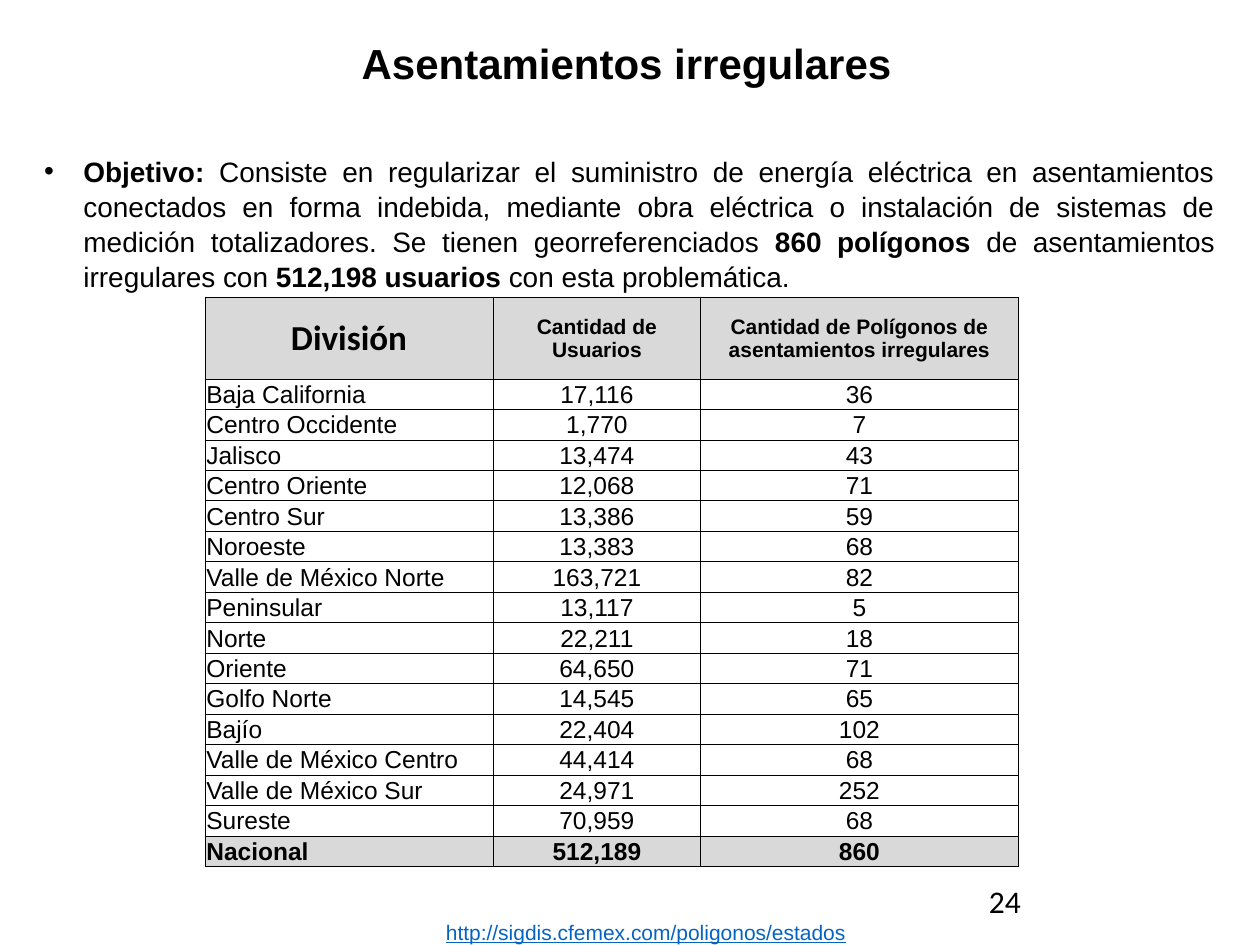
from lxml import etree
from pptx import Presentation
from pptx.dml.color import RGBColor
from pptx.enum.text import MSO_ANCHOR, MSO_AUTO_SIZE, PP_ALIGN
from pptx.oxml.ns import qn
from pptx.util import Pt

LEFT, CENTER, JUSTIFY = PP_ALIGN.LEFT, PP_ALIGN.CENTER, PP_ALIGN.JUSTIFY
TOP, MIDDLE = MSO_ANCHOR.TOP, MSO_ANCHOR.MIDDLE
NO_AUTOFIT = MSO_AUTO_SIZE.NONE

COLORS = {"text": "000000", "link": "0563C1", "shade": "D9D9D9", "border": "000000"}

TITLE = "Asentamientos irregulares"
OBJECTIVE = [  # text, bold
    ("Objetivo:", True),
    (" Consiste en regularizar el suministro de energía eléctrica en asentamientos "
     "conectados en forma indebida, mediante obra eléctrica o instalación de sistemas "
     "de medición totalizadores. Se tienen georreferenciados ", False),
    ("860 polígonos ", True),
    ("de asentamientos irregulares con ", False),
    ("512,198 usuarios", True),
    (" con esta problemática.", False),
]
HEADER = ("División", "Cantidad de Usuarios",
          "Cantidad de Polígonos de asentamientos irregulares")
DIVISIONS = [
    ("Baja California", "17,116", "36"),
    ("Centro Occidente", "1,770", "7"),
    ("Jalisco", "13,474", "43"),
    ("Centro Oriente", "12,068", "71"),
    ("Centro Sur", "13,386", "59"),
    ("Noroeste", "13,383", "68"),
    ("Valle de México Norte", "163,721", "82"),
    ("Peninsular", "13,117", "5"),
    ("Norte", "22,211", "18"),
    ("Oriente", "64,650", "71"),
    ("Golfo Norte", "14,545", "65"),
    ("Bajío", "22,404", "102"),
    ("Valle de México Centro", "44,414", "68"),
    ("Valle de México Sur", "24,971", "252"),
    ("Sureste", "70,959", "68"),
]
TOTAL = ("Nacional", "512,189", "860")
SOURCE_ADDRESS = "http://sigdis.cfemex.com/poligonos/estados"
PAGE_NUMBER = "24"

TABLE_LEFT, TABLE_TOP = 117.2, 169.8
COLUMN_WIDTHS = (164.5, 118.8, 181.2)
HEADER_HEIGHT, ROW_HEIGHT = 46.8, 17.42


def add_run(paragraph, text, size, bold=False, font="Arial", color="text"):
    run = paragraph.add_run()
    run.text = text
    run.font.name = font
    run.font.size = Pt(size)
    run.font.bold = bold
    run.font.color.rgb = RGBColor.from_string(COLORS[color])
    return run


def place(shape, left, top, width, height, anchor=TOP):
    shape.left, shape.top = Pt(left), Pt(top)
    shape.width, shape.height = Pt(width), Pt(height)
    frame = shape.text_frame
    frame.auto_size = NO_AUTOFIT
    frame.vertical_anchor = anchor
    frame.word_wrap = True
    return frame.paragraphs[0]


def add_text_box(slide, left, top, width, height):
    shape = slide.shapes.add_textbox(0, 0, 0, 0)
    return place(shape, left, top, width, height)


def add_bullet(paragraph, indent):
    properties = paragraph._p.get_or_add_pPr()
    properties.set("marL", str(Pt(indent)))
    properties.set("indent", str(-Pt(indent)))
    font = etree.SubElement(properties, qn("a:buFont"))
    font.set("typeface", "Arial")
    etree.SubElement(properties, qn("a:buChar")).set("char", "•")


def add_borders(cell):
    properties = cell._tc.get_or_add_tcPr()
    for side in ("a:lnL", "a:lnR", "a:lnT", "a:lnB"):
        line = etree.SubElement(properties, qn(side), w=str(Pt(0.5)))
        fill = etree.SubElement(line, qn("a:solidFill"))
        etree.SubElement(fill, qn("a:srgbClr")).set("val", COLORS["border"])


def fill_cell(cell, text, size, bold, shaded, alignment, font):
    add_borders(cell)
    if shaded:
        cell.fill.solid()
        cell.fill.fore_color.rgb = RGBColor.from_string(COLORS["shade"])
    else:
        cell.fill.background()
    cell.margin_left = cell.margin_right = cell.margin_top = Pt(0.7)
    cell.margin_bottom = 0
    cell.vertical_anchor = MIDDLE
    paragraph = cell.text_frame.paragraphs[0]
    paragraph.alignment = alignment
    add_run(paragraph, text, size, bold, font)


def add_division_table(slide):
    rows = [HEADER, *DIVISIONS, TOTAL]
    heights = [HEADER_HEIGHT] + [ROW_HEIGHT] * (len(rows) - 1)
    table = slide.shapes.add_table(
        len(rows), len(HEADER), Pt(TABLE_LEFT), Pt(TABLE_TOP),
        Pt(sum(COLUMN_WIDTHS)), Pt(sum(heights))).table
    table.first_row = table.horz_banding = False
    for column, width in zip(table.columns, COLUMN_WIDTHS):
        column.width = Pt(width)
    for row_index, values in enumerate(rows):
        table.rows[row_index].height = Pt(heights[row_index])
        is_header = values is HEADER
        emphasized = is_header or values is TOTAL
        for column_index, text in enumerate(values):
            is_name = column_index == 0
            size, font = (12 if is_header else 14), "Arial"
            if is_header and is_name:
                size, font = 20, "Calibri"
            alignment = LEFT if is_name and not is_header else CENTER
            fill_cell(table.cell(row_index, column_index), text, size,
                      emphasized, emphasized, alignment, font)


def main():
    presentation = Presentation()
    presentation.slide_width, presentation.slide_height = Pt(720), Pt(540)
    slide = presentation.slides.add_slide(presentation.slide_layouts[1])

    title = place(slide.shapes.title, 141.5, 18, 433, 36, MIDDLE)
    title.alignment = CENTER
    add_run(title, TITLE, 24, bold=True)

    objective = place(slide.placeholders[1], 18, 83.5, 683.3, 124)
    add_bullet(objective, 22.5)
    objective.alignment = JUSTIFY
    objective.line_spacing = 1.05
    objective.space_before = Pt(0)
    for text, bold in OBJECTIVE:
        add_run(objective, text, 16, bold)

    add_division_table(slide)

    address = add_text_box(slide, 247.7, 522, 248.4, 21.6)
    add_run(address, SOURCE_ADDRESS, 12, color="link").font.underline = True

    page_number = add_text_box(slide, 558, 500.4, 162, 28.8)
    add_run(page_number, PAGE_NUMBER, 18, font="Calibri")

    presentation.save("out.pptx")


if __name__ == "__main__":
    main()
